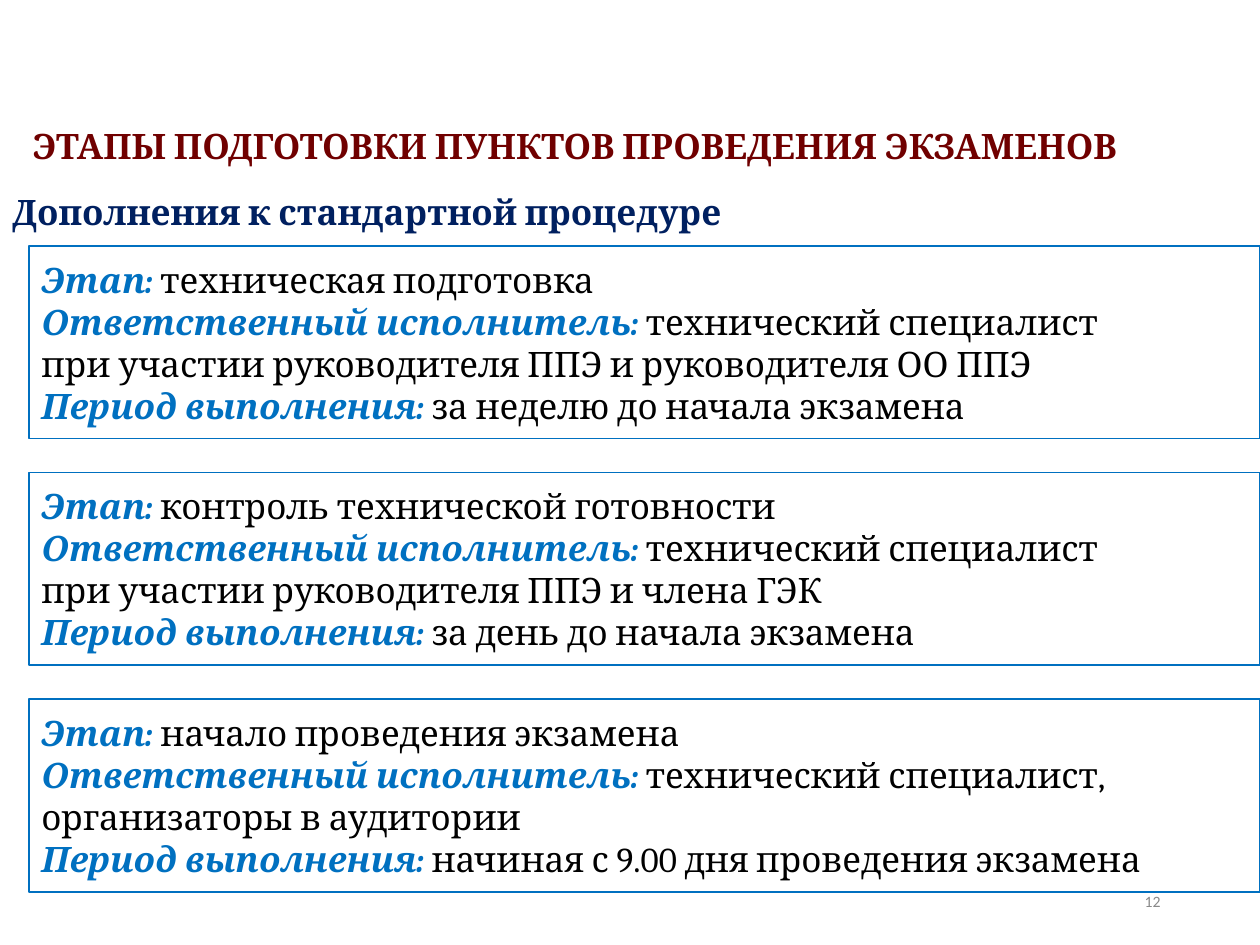
from pptx import Presentation
from pptx.dml.color import RGBColor
from pptx.enum.shapes import MSO_SHAPE
from pptx.enum.text import MSO_ANCHOR, MSO_AUTO_SIZE, PP_ALIGN
from pptx.util import Inches, Pt

RECTANGLE = MSO_SHAPE.RECTANGLE
TOP, MIDDLE = MSO_ANCHOR.TOP, MSO_ANCHOR.MIDDLE
LEFT, RIGHT = PP_ALIGN.LEFT, PP_ALIGN.RIGHT
NO_AUTOFIT = MSO_AUTO_SIZE.NONE

DARK_RED, NAVY, BLUE, BLACK, WHITE, GREY = (
    "700000", "002060", "0070C0", "000000", "FFFFFF", "898989")

HEADING = {"name": "Cambria", "size": Pt(20), "bold": True, "italic": False}
LABEL = {**HEADING, "italic": True}
BODY = {**HEADING, "bold": False}
PAGE_NUMBER = {"name": "Calibri", "size": Pt(9)}


def rgb(value):
    return RGBColor.from_string(value)


class StageSlide:
    def __init__(self, presentation):
        self.slide = presentation.slides.add_slide(presentation.slide_layouts[5])

    def fill_text(self, shape, lines, anchor=MIDDLE, align=LEFT):
        """Each line is a list of (text, format, colour) runs."""
        frame = shape.text_frame
        settings = {"word_wrap": True, "auto_size": NO_AUTOFIT,
                    "vertical_anchor": anchor}
        for name, value in settings.items():
            setattr(frame, name, value)
        for index, runs in enumerate(lines):
            paragraph = frame.add_paragraph() if index else frame.paragraphs[0]
            paragraph.alignment = align
            for text, style, colour in runs:
                run = paragraph.add_run()
                run.text = text
                for name, value in style.items():
                    setattr(run.font, name, value)
                run.font.color.rgb = rgb(colour)

    def title(self, text, left, top, width, height):
        shape = self.slide.shapes.title
        box = {"left": left, "top": top, "width": width, "height": height}
        for name, value in box.items():
            setattr(shape, name, Inches(value))
        self.fill_text(shape, [[(text, HEADING, DARK_RED)]], anchor=TOP)

    def text(self, text, box, style, colour, align=LEFT):
        shape = self.slide.shapes.add_textbox(*map(Inches, box))
        self.fill_text(shape, [[(text, style, colour)]], align=align)

    def panel(self, lines, box):
        shape = self.slide.shapes.add_shape(RECTANGLE, *map(Inches, box))
        shape.shadow.inherit = False
        shape.fill.solid()
        shape.fill.fore_color.rgb = rgb(WHITE)
        shape.line.color.rgb = rgb(BLUE)
        shape.line.width = Pt(1)
        self.fill_text(shape, lines)


def stage_lines(stage, executor, participants, period):
    lines = [
        [("Этап: ", LABEL, BLUE), (stage, BODY, BLACK)],
        [("Ответственный исполнитель:", LABEL, BLUE),
         (f" {executor}", BODY, BLACK)],
    ]
    if participants:
        lines.append([(participants, BODY, BLACK)])
    lines.append([("Период выполнения:", LABEL, BLUE),
                  (f" {period}", BODY, BLACK)])
    return lines


STAGES = [
    ("техническая подготовка", "технический специалист",
     "при участии руководителя ППЭ и руководителя ОО ППЭ",
     "за неделю до начала экзамена"),
    ("контроль технической готовности", "технический специалист",
     "при участии руководителя ППЭ и члена ГЭК",
     "за день до начала экзамена"),
    ("начало проведения экзамена",
     "технический специалист, организаторы в аудитории", None,
     "начиная с 9.00 дня проведения экзамена"),
]


def main():
    presentation = Presentation()
    presentation.slide_width = Inches(10)
    presentation.slide_height = Inches(7.5)
    page = StageSlide(presentation)

    # Headings
    page.title("ЭТАПЫ ПОДГОТОВКИ ПУНКТОВ ПРОВЕДЕНИЯ ЭКЗАМЕНОВ",
               0.16, 0.94, 9.61, 0.44)
    page.text("Дополнения к стандартной процедуре", (0, 1.48, 10, 0.39),
              HEADING, NAVY)

    # Stage panels, evenly spaced down the slide
    for index, stage in enumerate(STAGES):
        page.panel(stage_lines(*stage), (0.23, 1.95 + 1.8 * index, 9.77, 1.53))

    # Page number
    page.text("12", (7.06, 6.95, 2.25, 0.4), PAGE_NUMBER, GREY, align=RIGHT)

    presentation.save("out.pptx")


if __name__ == "__main__":
    main()
